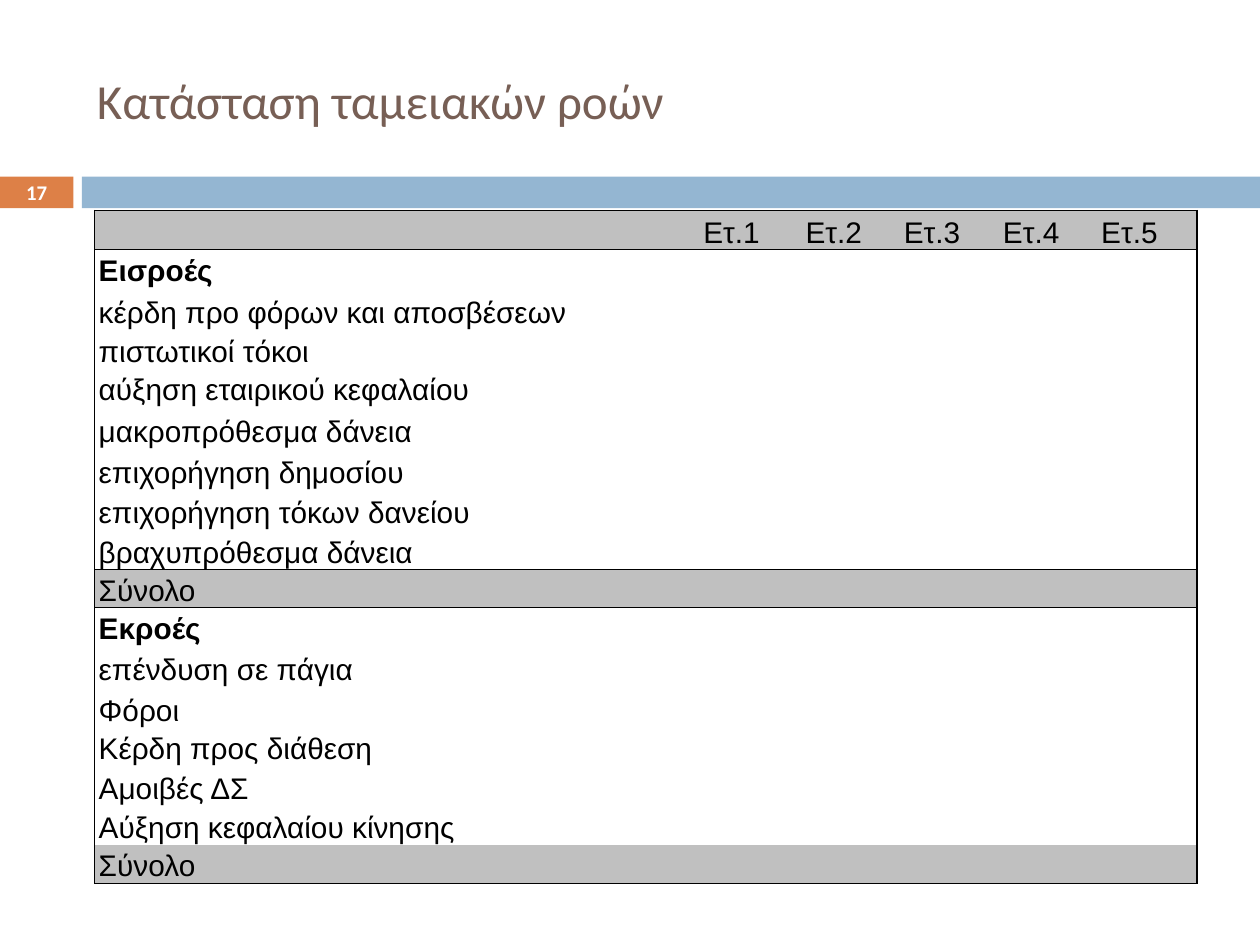
from pptx import Presentation
from pptx.util import Cm, Pt
from pptx.dml.color import RGBColor
from pptx.enum.shapes import MSO_SHAPE
from pptx.enum.text import MSO_ANCHOR, PP_ALIGN
from pptx.oxml import parse_xml
from pptx.oxml.ns import nsdecls, qn


def rgb(value):
    return RGBColor.from_string(value)


def write(p, text, color, **fmt):
    p.text = text
    for r in p.runs:
        r.font.color.rgb = rgb(color)
        for name, value in fmt.items():
            setattr(r.font, name, value)


prs = Presentation()
prs.slide_width, prs.slide_height = Cm(25.4), Cm(19.05)
s = prs.slides.add_slide(prs.slide_layouts[5])

bars = [(0, 1.48, "DD8047"), (1.65, 23.75, "94B6D2")]
for left, width, color in bars:
    sp = s.shapes.add_shape(MSO_SHAPE.RECTANGLE, Cm(left), Cm(3.56), Cm(width), Cm(0.64))
    sp.shadow.inherit = False
    sp.fill.solid()
    sp.fill.fore_color.rgb = rgb(color)
    sp.line.fill.background()

title = s.shapes.title
box = {"left": 1.7, "top": 0.64, "width": 22.66, "height": 2.74}
for name, value in box.items():
    setattr(title, name, Cm(value))
tf = title.text_frame
tf.vertical_anchor = MSO_ANCHOR.MIDDLE
p = tf.paragraphs[0]
p.alignment = PP_ALIGN.LEFT
write(p, "Κατάσταση ταμειακών ροών", "775F55", size=Pt(28), name="Calibri")

number = s.shapes.add_textbox(0, Cm(3.53), Cm(1.48), Cm(0.69))
tf = number.text_frame
tf.word_wrap = True
tf.vertical_anchor = MSO_ANCHOR.MIDDLE
p = tf.paragraphs[0]
p.alignment = PP_ALIGN.CENTER
write(p, "17", "FFFFFF", size=Pt(11.9), name="Calibri", bold=True)

widths = [10.62, 3.43, 1.98, 1.98, 1.98, 2.23]
heights = [0.76, 6.45, 0.76, 4.8, 0.76]
frame = s.shapes.add_table(5, 6, Cm(1.91), Cm(4.24), Cm(sum(widths)), Cm(sum(heights)))
tbl = frame.table
tbl.first_row = tbl.horz_banding = False
for style in frame.element.iter(qn("a:tableStyleId")):
    style.text = "{2D5ABB26-0587-4C30-8999-92F81FD0307C}"
for col, width in zip(tbl.columns, widths):
    col.width = Cm(width)
for row, height in zip(tbl.rows, heights):
    row.height = Cm(height)

total = [("Σύνολο", 21.6, 0, False)]
sections = {
    1: [
        ("Εισροές", 22.1, 0, True),
        ("κέρδη προ φόρων και αποσβέσεων\vπιστωτικοί τόκοι", 22.6, 1, False),
        ("αύξηση εταιρικού κεφαλαίου", 21.7, 0, False),
        ("μακροπρόθεσμα δάνεια", 22.6, 1.1, False),
        ("επιχορήγηση δημοσίου", 22.6, 1.1, False),
        ("επιχορήγηση τόκων δανείου\vβραχυπρόθεσμα δάνεια", 22.7, 0, False),
    ],
    2: total,
    3: [
        ("Εκροές", 21.8, 0, True),
        ("επένδυση σε πάγια", 22.6, 1, False),
        ("Φόροι", 22.6, 1, False),
        ("Κέρδη προς διάθεση", 21.7, 0, False),
        ("Αμοιβές ΔΣ", 22.6, 0, False),
        ("Αύξηση κεφαλαίου κίνησης", 22.6, 0, False),
    ],
    4: total,
}
indents = [0, 1.65, 0.28, 0.28, 0.3, 0.3]

for i in range(5):
    if i:
        tbl.cell(i, 0).merge(tbl.cell(i, 5))
    for j in range(6):
        cell = tbl.cell(i, j)
        for side in ("left", "right", "top", "bottom"):
            setattr(cell, f"margin_{side}", 0)
        merged = i > 0 and j == 0
        borders = {
            "L": 0.75 if j == 0 else 0,
            "R": 0.75 if j == 5 or merged else 0,
            "T": 0.75 if i < 3 else 0,
            "B": {0: 0.75, 1: 0.75, 4: 1}.get(i, 0),
        }
        tcPr = cell._tc.get_or_add_tcPr()
        for side, width in borders.items():
            if width:
                tcPr.append(parse_xml(
                    f'<a:ln{side} {nsdecls("a")} w="{Pt(width)}"><a:solidFill>'
                    f'<a:srgbClr val="000000"/></a:solidFill></a:ln{side}>'))
        if i % 2 == 0:
            cell.fill.solid()
            cell.fill.fore_color.rgb = rgb("C0C0C0")
        else:
            cell.fill.background()

        if i == 0:
            lines = [(f"Ετ.{j}", 22.4, 0, False)] if j else []
            indent = indents[j]
        else:
            lines = [] if j else sections[i]
            indent = 0.08
        tf = cell.text_frame
        for n, (text, spacing, before, bold) in enumerate(lines):
            p = tf.add_paragraph() if n else tf.paragraphs[0]
            p.line_spacing = Pt(spacing)
            if before:
                p.space_before = Pt(before)
            p._p.get_or_add_pPr().set("marL", str(Cm(indent)))
            write(p, text, "000000", size=Pt(17), name="Arial", bold=bold)

prs.save("out.pptx")
